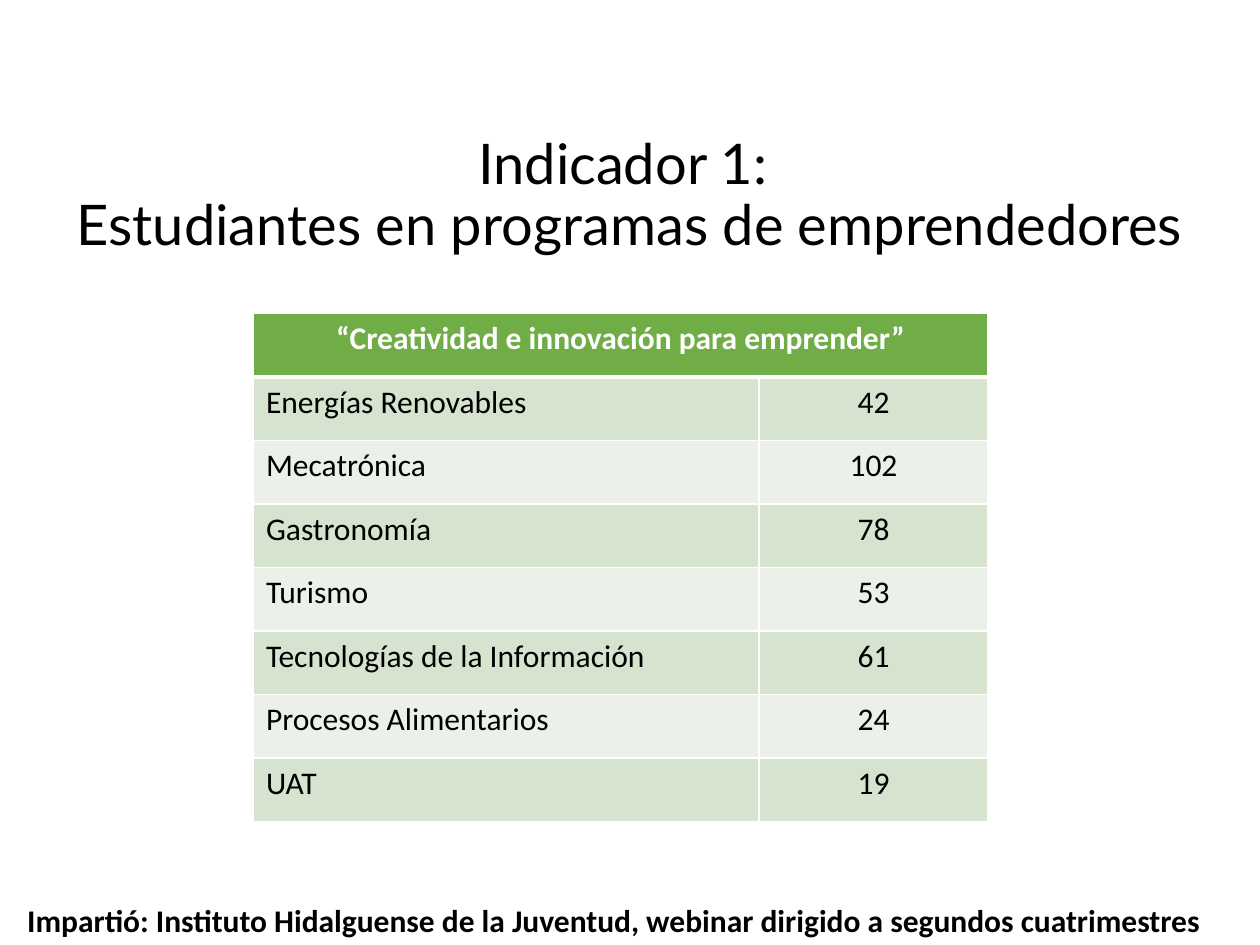
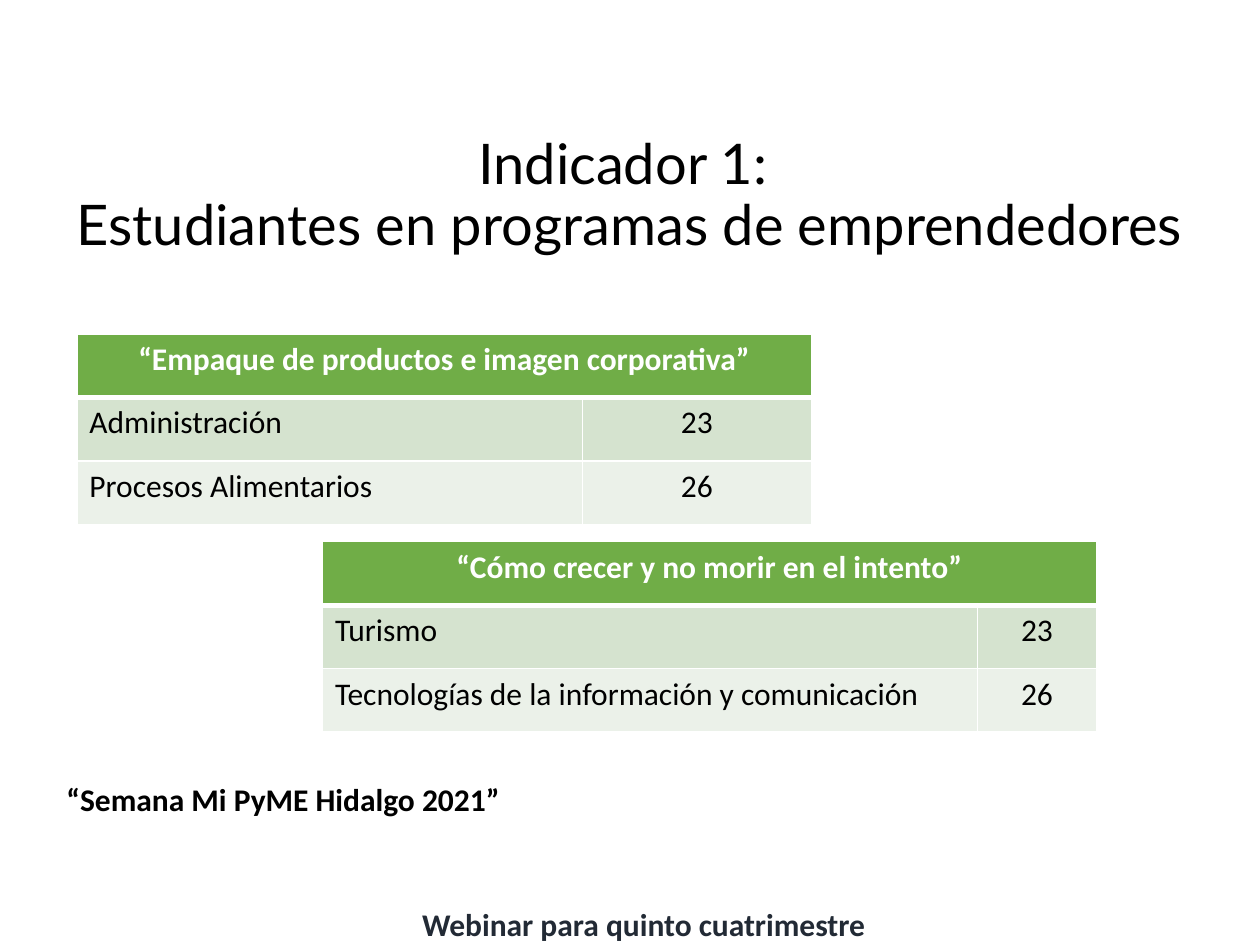
import pptx
import pptx.dml.color
import pptx.enum.text
import pptx.oxml
import pptx.oxml.ns
import pptx.util

Cm = pptx.util.Cm
Pt = pptx.util.Pt
RGBColor = pptx.dml.color.RGBColor
ALIGN = pptx.enum.text.PP_ALIGN
ANCHOR = pptx.enum.text.MSO_ANCHOR
AUTO_SIZE = pptx.enum.text.MSO_AUTO_SIZE

BLACK = RGBColor(0x00, 0x00, 0x00)
WHITE = RGBColor(0xFF, 0xFF, 0xFF)
SLATE = RGBColor(0x22, 0x2A, 0x35)
GREEN = RGBColor(0x70, 0xAD, 0x47)
BANDS = (RGBColor(0xD5, 0xE3, 0xCF), RGBColor(0xEB, 0xF1, 0xE9))

TITLE_FONT = "Lato"
BODY_FONT = "Calibri"
TITLE_LINES = ("Indicador 1: ", "Estudiantes en programas de emprendedores")
TITLE_BOX = (0, 2.13, 25.4, 3.68)
ROW_HEIGHT = 1.28
THIN, THICK = 1, 3


def add_span(para, text, color, bold=False, size=18, font=BODY_FONT):
    """Add one formatted run to a paragraph."""
    span = para.add_run()
    span.text = text
    span.font.name = font
    span.font.size = Pt(size)
    span.font.bold = bold
    span.font.color.rgb = color


def add_titled_page(deck):
    """Add a title-only page that carries the shared heading."""
    page = deck.slides.add_slide(deck.slide_layouts[5])
    title = page.shapes.title
    title.left, title.top, title.width, title.height = map(Cm, TITLE_BOX)
    frame = title.text_frame
    frame.auto_size = AUTO_SIZE.NONE
    frame.word_wrap = True
    frame.vertical_anchor = ANCHOR.MIDDLE
    para = frame.paragraphs[0]
    para.alignment = ALIGN.CENTER
    para.line_spacing = 0.9
    for number, line in enumerate(TITLE_LINES):
        if number:
            para.add_line_break()
        add_span(para, line, BLACK, size=32, font=TITLE_FONT)
    return page


def add_note(page, box, text, color=BLACK, centered=False):
    """Add a bold line of text, either at the left or centred in its box."""
    frame = page.shapes.add_textbox(*map(Cm, box)).text_frame
    frame.word_wrap = True
    para = frame.paragraphs[0]
    if centered:
        frame.vertical_anchor = ANCHOR.MIDDLE
        para.alignment = ALIGN.CENTER
        para.line_spacing = 0.9
    add_span(para, text, color, bold=True)


def set_borders(cell, top, bottom):
    """Draw white borders around a cell, with widths in points."""
    properties = cell._tc.get_or_add_tcPr()
    for side, width in (("L", THIN), ("R", THIN), ("T", top), ("B", bottom)):
        properties.append(pptx.oxml.parse_xml(
            f'<a:ln{side} {pptx.oxml.ns.nsdecls("a")} w="{Pt(width)}">'
            f'<a:solidFill><a:srgbClr val="{WHITE}"/></a:solidFill></a:ln{side}>'))


def fill_cell(cell, text, fill, color, bold, alignment):
    """Fill a cell and write its text."""
    cell.fill.solid()
    cell.fill.fore_color.rgb = fill
    para = cell.text_frame.paragraphs[0]
    para.alignment = alignment
    add_span(para, text, color, bold)


def add_program_table(page, left, top, widths, program, counts):
    """Add a table of student counts by degree under a merged program name."""
    row_count = len(counts) + 1
    table = page.shapes.add_table(
        row_count, 2, Cm(left), Cm(top), Cm(sum(widths)), Cm(ROW_HEIGHT * row_count)).table
    for column, width in zip(table.columns, widths):
        column.width = Cm(width)
    for index, row in enumerate(table.rows):
        row.height = Cm(ROW_HEIGHT)
        for cell in row.cells:
            set_borders(cell, THICK if index == 1 else THIN, THICK if index == 0 else THIN)
    heading = table.cell(0, 0)
    heading.merge(table.cell(0, 1))
    fill_cell(heading, program, GREEN, WHITE, True, ALIGN.CENTER)
    for index, (degree, count) in enumerate(counts):
        band = BANDS[index % 2]
        fill_cell(table.cell(index + 1, 0), degree, band, BLACK, False, ALIGN.LEFT)
        fill_cell(table.cell(index + 1, 1), str(count), band, BLACK, False, ALIGN.CENTER)


def build_creativity_page(deck):
    """Build the page for the creativity and innovation webinar."""
    page = add_titled_page(deck)
    add_program_table(
        page, 5.11, 6.32, (10.19, 4.62), "“Creatividad e innovación para emprender”",
        [("Energías Renovables", 42), ("Mecatrónica", 102), ("Gastronomía", 78),
         ("Turismo", 53), ("Tecnologías de la Información", 61),
         ("Procesos Alimentarios", 24), ("UAT", 19)])
    add_note(page, (0.3, 18.03, 25.1, 1.02),
             "Impartió: Instituto Hidalguense de la Juventud, "
             "webinar dirigido a segundos cuatrimestres")


def build_business_week_page(deck):
    """Build the page for the two business week webinars."""
    page = add_titled_page(deck)
    add_note(page, (0, 18.01, 25.96, 1.32), "Webinar para quinto cuatrimestre",
             SLATE, centered=True)
    add_program_table(
        page, 1.55, 6.73, (10.19, 4.62), "“Empaque de productos e imagen corporativa”",
        [("Administración", 23), ("Procesos Alimentarios", 26)])
    add_program_table(
        page, 6.5, 10.92, (13.21, 2.39), "“Cómo crecer y no morir en el intento”",
        [("Turismo", 23), ("Tecnologías de la información y comunicación", 26)])
    add_note(page, (1.09, 15.6, 21.89, 1.02), "“Semana Mi PyME Hidalgo 2021”")


def main():
    """Build both pages and save the deck."""
    deck = pptx.Presentation()
    deck.slide_width, deck.slide_height = Cm(25.4), Cm(19.05)
    build_creativity_page(deck)
    build_business_week_page(deck)
    deck.save("out.pptx")


if __name__ == "__main__":
    main()
